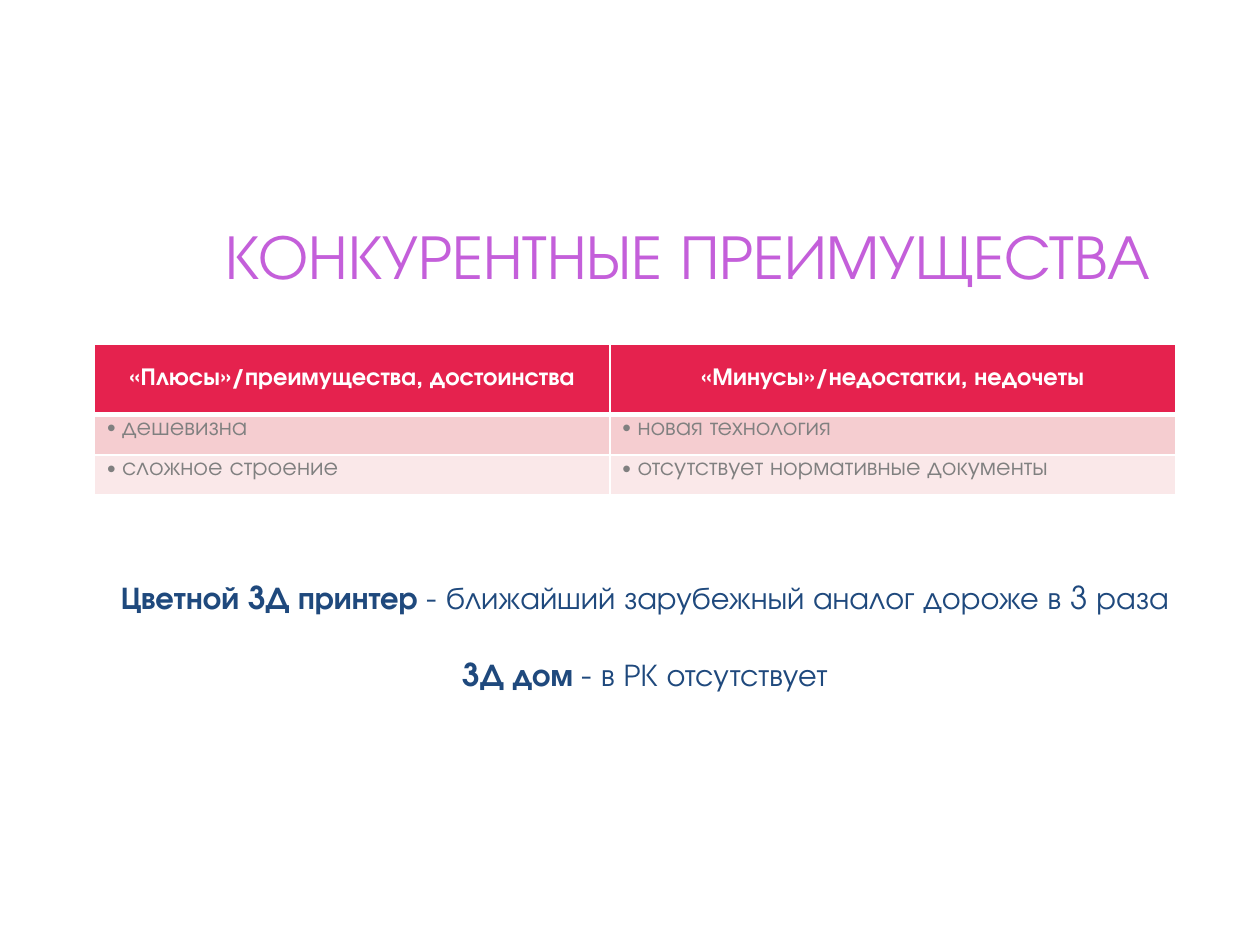
from dataclasses import dataclass

from lxml import etree
from pptx import Presentation
from pptx.dml.color import RGBColor
from pptx.enum import text
from pptx.oxml import ns
from pptx.util import Inches, Pt


@dataclass(frozen=True)
class Theme:
    """Colours, typeface and type sizes of the deck."""
    font: str = "TeX Gyre Adventor"
    title: str = "C45FDA"
    header: str = "E5224E"
    bands: tuple = ("F5CDD0", "FAE8E9")
    white: str = "FFFFFF"
    muted: str = "808080"
    navy: str = "1F497D"
    title_size: int = 36
    table_size: int = 14
    note_size: int = 18


THEME = Theme()
TITLE = "КОНКУРЕНТНЫЕ ПРЕИМУЩЕСТВА"
ROWS = [
    ("«Плюсы»/преимущества, достоинства", "«Минусы»/недостатки, недочеты"),
    ("дешевизна", "новая технология"),
    ("сложное строение", "отсутствует нормативные документы"),
]
NOTES = [
    ("Цветной 3Д принтер ", "- ближайший зарубежный аналог дороже в 3 раза"),
    ("3Д дом ", "- в РК отсутствует"),
]


def style_span(span, size, color, bold=False):
    """Format one run."""
    span.font.name = THEME.font
    span.font.size = Pt(size)
    span.font.bold = bold
    span.font.color.rgb = RGBColor.from_string(color)


def add_bullet(para, indent):
    """Give a paragraph a hanging round bullet."""
    props = para._p.get_or_add_pPr()
    props.set("marL", str(indent))
    props.set("indent", str(-indent))
    etree.SubElement(props, ns.qn("a:buFont"), typeface="Arial")
    etree.SubElement(props, ns.qn("a:buChar"), char="•")


def add_borders(cell, color, widths):
    """Draw the cell edges from a mapping of edge letter to points."""
    props = cell._tc.get_or_add_tcPr()
    for edge, width in widths.items():
        line = etree.SubElement(props, ns.qn(f"a:ln{edge}"), w=str(Pt(width)))
        fill = etree.SubElement(line, ns.qn("a:solidFill"))
        etree.SubElement(fill, ns.qn("a:srgbClr"), val=color)


def place_title(page, left, top, width, height):
    """Set the slide title, right aligned in the lower part of its box."""
    title = page.shapes.title
    title.left, title.top, title.width, title.height = left, top, width, height
    frame = title.text_frame
    frame.text = TITLE
    frame.word_wrap = True
    frame.auto_size = text.MSO_AUTO_SIZE.NONE
    frame.vertical_anchor = text.MSO_ANCHOR.MIDDLE
    frame.margin_top, frame.margin_bottom = Inches(0.55), 0
    para = frame.paragraphs[0]
    para.alignment = text.PP_ALIGN.RIGHT
    para.line_spacing = 0.9
    style_span(para.runs[0], THEME.title_size, THEME.title)


def fill_cell(cell, words, row):
    """Write and format one table cell according to its row."""
    is_header = row == 0
    cell.text = words
    para = cell.text_frame.paragraphs[0]
    if is_header:
        cell.vertical_anchor = text.MSO_ANCHOR.MIDDLE
        para.alignment = text.PP_ALIGN.CENTER
    else:
        cell.margin_top, cell.margin_bottom = Inches(0.02), 0
        add_bullet(para, Inches(0.12))
    style_span(para.runs[0], THEME.table_size,
               THEME.white if is_header else THEME.muted, is_header)
    add_borders(cell, THEME.white,
                {"L": 1, "R": 1, "T": 3 if row == 1 else 1, "B": 3 if is_header else 1})
    cell.fill.solid()
    color = THEME.header if is_header else THEME.bands[row - 1]
    cell.fill.fore_color.rgb = RGBColor.from_string(color)


def place_table(page, left, top, width, height):
    """Build the table of strengths and weaknesses."""
    table = page.shapes.add_table(len(ROWS), 2, left, top, width, height).table
    first_width, body_height = Inches(4.09), Inches(0.32)
    table.columns[0].width = first_width
    table.columns[1].width = width - first_width
    for row, entries in enumerate(ROWS):
        table.rows[row].height = body_height if row else height - 2 * body_height
        for column, words in enumerate(entries):
            fill_cell(table.cell(row, column), words, row)


def place_notes(page, left, top, width, height):
    """Add the centred remarks, each with a bold lead."""
    frame = page.shapes.add_textbox(left, top, width, height).text_frame
    frame.word_wrap = True
    for index, (lead, remark) in enumerate(NOTES):
        para = frame.add_paragraph() if index else frame.paragraphs[0]
        para.alignment = text.PP_ALIGN.CENTER
        if index:
            para.space_before = Pt(22)
        for words, bold in ((lead, True), (remark, False)):
            span = para.add_run()
            span.text = words
            style_span(span, THEME.note_size, THEME.navy, bold)


def main():
    """Build and save the deck."""
    deck = Presentation()
    deck.slide_width, deck.slide_height = Inches(10), Inches(7.5)
    page = deck.slides.add_slide(deck.slide_layouts[5])
    place_title(page, Inches(0.28), Inches(1.31), Inches(8.95), Inches(0.94))
    place_table(page, Inches(0.75), Inches(2.73), Inches(8.58), Inches(1.2))
    place_notes(page, Inches(0.83), Inches(4.54), Inches(8.58), Inches(1.01))
    deck.save("out.pptx")


if __name__ == "__main__":
    main()
